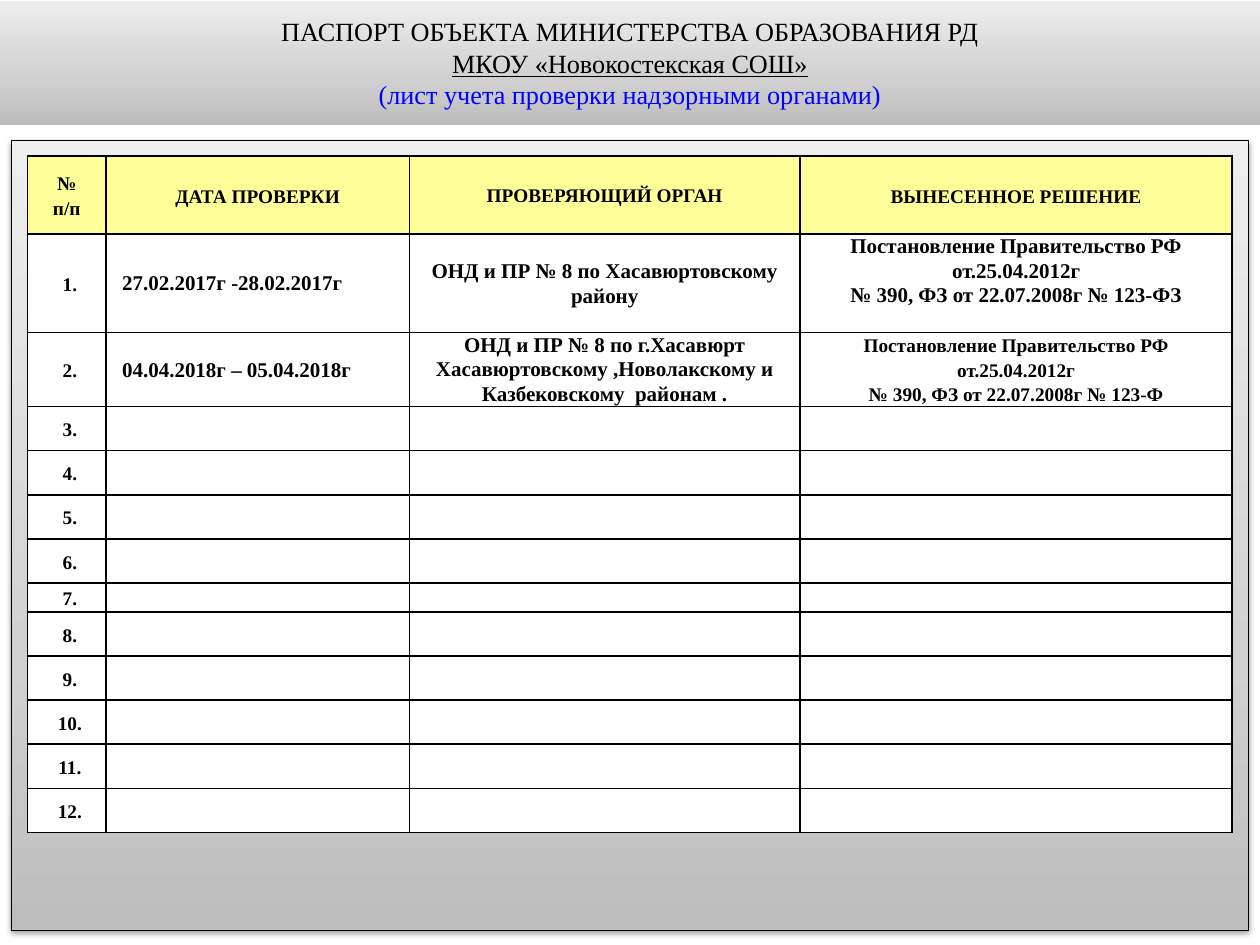
from copy import deepcopy

from lxml.etree import SubElement
from pptx import Presentation
from pptx.dml.color import RGBColor
from pptx.enum.shapes import MSO_SHAPE
from pptx.enum.text import MSO_ANCHOR, PP_ALIGN
from pptx.oxml.ns import qn
from pptx.util import Inches, Pt

COLORS = {"ink": "000000", "accent": "0000FF", "header": "FFFF99", "paper": "FFFFFF"}
BANNER_FADE = ((0, "BCBCBC"), (0.35, "D0D0D0"), (1, "EDEDED"))
PANEL_FADE = ((0, "BDBDBD"), (0.35, "D1D1D1"), (1, "EEEEEE"))
WIDTH, HEIGHT = 10, 7.5
COLUMNS = (0.62, 2.41, 3.1, 3.43)
ROWS = (0.62, 0.78, 0.59) + (0.35,) * 4 + (0.23,) + (0.35,) * 5
HEADINGS = ("№\nп/п", "ДАТА ПРОВЕРКИ", "ПРОВЕРЯЮЩИЙ ОРГАН", "ВЫНЕСЕННОЕ РЕШЕНИЕ")
INSPECTIONS = (
    ("27.02.2017г -28.02.2017г",
     "ОНД и ПР № 8 по Хасавюртовскому району",
     "Постановление Правительство РФ от.25.04.2012г\n№ 390, ФЗ от 22.07.2008г № 123-ФЗ"),
    ("04.04.2018г – 05.04.2018г",
     "ОНД и ПР № 8 по г.Хасавюрт Хасавюртовскому ,Новолакскому и Казбековскому  районам .",
     "Постановление Правительство РФ от.25.04.2012г\n№ 390, ФЗ от 22.07.2008г № 123-Ф"),
)
CELL_FORMAT = {
    "margin_left": Inches(0.03), "margin_right": Inches(0.03),
    "margin_top": 0, "margin_bottom": 0, "vertical_anchor": MSO_ANCHOR.MIDDLE,
}


def apply(target, values):
    """Set every named attribute on the target."""
    for name, value in values.items():
        setattr(target, name, value)


class Sheet:
    """Hold the text style and the slide being filled."""

    def __init__(self, slide, font="Times New Roman"):
        self.slide, self.font = slide, font

    def add_line(self, paragraph, text, size, color="ink", spacing=None, indent=0,
                 align=PP_ALIGN.CENTER, **style):
        """Fill one formatted paragraph."""
        apply(paragraph, {"alignment": align, "line_spacing": spacing})
        if indent:
            paragraph._p.get_or_add_pPr().set("marL", str(Inches(indent)))
        run = paragraph.add_run()
        run.text = text
        apply(run.font, {"name": self.font, "size": Pt(size), **style})
        run.font.color.rgb = RGBColor.from_string(COLORS[color])

    def panel(self, left, top, width, height, fade):
        """Add a rectangle with a vertical fade, placed by shares of the slide."""
        box = self.slide.shapes.add_shape(
            MSO_SHAPE.RECTANGLE, Inches(left * WIDTH), Inches(top * HEIGHT),
            Inches(width * WIDTH), Inches(height * HEIGHT))
        box.shadow.inherit = False
        box.fill.gradient()
        box.fill.gradient_angle = 90
        stops = box.element.spPr.find(".//" + qn("a:gsLst"))
        stops.append(deepcopy(stops[0]))
        for stop, (position, color) in zip(box.fill.gradient_stops, fade):
            stop.position = position
            stop.color.rgb = RGBColor.from_string(color)
        box.line.fill.background()
        return box

    def banner(self, lines):
        """Add the title band across the top."""
        frame = self.panel(0, 0.001, 1, 0.131, BANNER_FADE).text_frame
        apply(frame, {"word_wrap": True, "vertical_anchor": MSO_ANCHOR.MIDDLE})
        for number, (text, style) in enumerate(lines):
            paragraph = frame.add_paragraph() if number else frame.paragraphs[0]
            self.add_line(paragraph, text, 15, **style)

    def backdrop(self):
        """Add the outlined, shadowed panel behind the table."""
        box = self.panel(0.009, 0.149, 0.982, 0.836, PANEL_FADE)
        box.line.color.rgb = RGBColor.from_string(COLORS["ink"])
        box.line.width = Pt(0.75)
        effects = box.element.spPr.find(qn("a:effectLst"))
        shadow = SubElement(effects, qn("a:outerShdw"), blurRad=str(Pt(3.1)),
                            dist=str(Pt(1.6)), dir="5400000", rotWithShape="0")
        tint = SubElement(shadow, qn("a:srgbClr"), val=COLORS["ink"])
        SubElement(tint, qn("a:alpha"), val="38000")

    def border(self, cell):
        """Draw a thin line on all four sides of a cell."""
        properties = cell._tc.get_or_add_tcPr()
        for place, side in enumerate(("lnL", "lnR", "lnT", "lnB")):
            line = SubElement(properties, qn("a:" + side), w=str(Pt(1)))
            fill = SubElement(line, qn("a:solidFill"))
            SubElement(fill, qn("a:srgbClr"), val=COLORS["ink"])
            properties.insert(place, line)

    def fill_cell(self, cell, text, fill, size, **style):
        """Format a cell and fill in its lines."""
        apply(cell, CELL_FORMAT)
        cell.fill.solid()
        cell.fill.fore_color.rgb = RGBColor.from_string(COLORS[fill])
        self.border(cell)
        frame = cell.text_frame
        if not text:
            SubElement(frame.paragraphs[0]._p, qn("a:endParaRPr"), sz="1100")
            return
        for number, line in enumerate(text.split("\n")):
            paragraph = frame.add_paragraph() if number else frame.paragraphs[0]
            self.add_line(paragraph, line, size, bold=True, **style)

    def register(self, left, top):
        """Add the table of inspections."""
        table = self.slide.shapes.add_table(
            len(ROWS), len(COLUMNS), Inches(left * WIDTH), Inches(top * HEIGHT),
            Inches(sum(COLUMNS)), Inches(sum(ROWS))).table
        apply(table, {"first_row": False, "horz_banding": False})
        for column, width in zip(table.columns, COLUMNS):
            column.width = Inches(width)
        for row, height in zip(table.rows, ROWS):
            row.height = Inches(height)
        for column, heading in enumerate(HEADINGS):
            self.fill_cell(table.cell(0, column), heading, "header", 11,
                           spacing=Pt(14) if column == 2 else 1.15)
        for number in range(1, len(ROWS)):
            self.fill_cell(table.cell(number, 0), f"{number}.", "paper", 11,
                           spacing=1.15, indent=0.05)
            entry = INSPECTIONS[number - 1] if number <= len(INSPECTIONS) else ("",) * 3
            for column, text in enumerate(entry, 1):
                dated = column == 1
                self.fill_cell(
                    table.cell(number, column), text, "paper",
                    11 if (number, column) == (2, 3) else 12,
                    spacing=Pt(13.8 if (number, column) == (2, 2) else 14),
                    indent=0.1 if dated else 0,
                    align=PP_ALIGN.LEFT if dated else PP_ALIGN.CENTER)
        table.cell(1, 3).vertical_anchor = MSO_ANCHOR.TOP


def main():
    """Build and save the inspection sheet."""
    deck = Presentation()
    apply(deck, {"slide_width": Inches(WIDTH), "slide_height": Inches(HEIGHT)})
    sheet = Sheet(deck.slides.add_slide(deck.slide_layouts[6]))
    sheet.banner((
        ("ПАСПОРТ ОБЪЕКТА МИНИСТЕРСТВА ОБРАЗОВАНИЯ РД", {}),
        ("МКОУ «Новокостекская СОШ»", {"underline": True}),
        ("(лист учета проверки надзорными органами)", {"color": "accent"}),
    ))
    sheet.backdrop()
    sheet.register(0.022, 0.165)
    deck.save("out.pptx")


if __name__ == "__main__":
    main()
